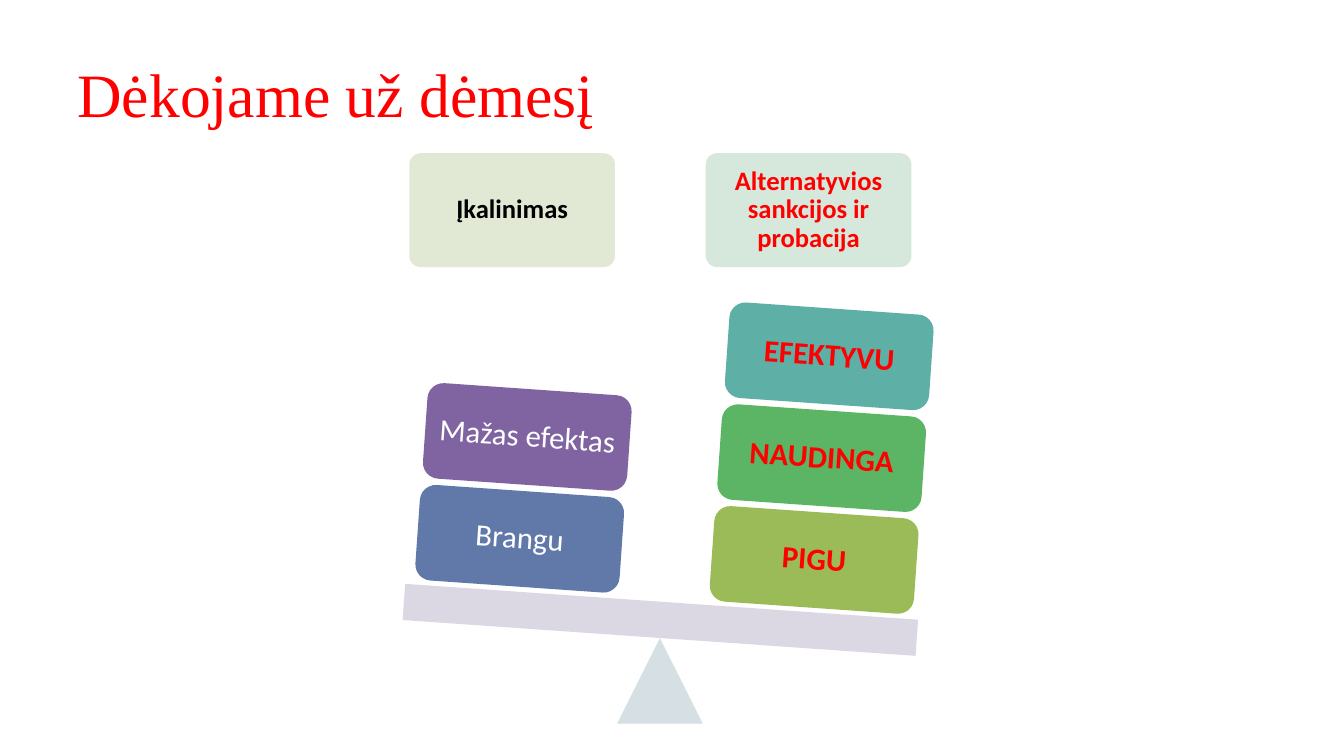
from lxml import etree
from pptx import Presentation
from pptx import util as u
from pptx.dml.color import RGBColor
from pptx.enum import shapes, text
from pptx.oxml.ns import qn

COLORS = {
    "red": "FF0000", "black": "000000", "white": "FFFFFF",
    "prison": "DEE7D1", "probation": "D2E5D9",
    "pivot": "D2DCE2", "beam": "D8D3E0",
    "cheap": "9BBB59", "useful": "5CB565", "effective": "5EAFA6",
    "costly": "6179A8", "weak": "8064A2",
}
SHAPE = shapes.MSO_SHAPE
TILT = 4


def write(sp, content, size=22, color="white", font="Calibri", bold=False,
          align=text.PP_ALIGN.CENTER, spacing=0.9, inset=0.09):
    tf = sp.text_frame
    tf.word_wrap = True
    tf.vertical_anchor = text.MSO_ANCHOR.MIDDLE
    tf.margin_left = tf.margin_right = u.Inches(inset)
    tf.margin_top = tf.margin_bottom = u.Inches(inset)
    p = tf.paragraphs[0]
    p.alignment = align
    p.line_spacing = spacing
    r = p.add_run()
    r.text = content
    r.font.name = font
    r.font.size = u.Pt(size)
    r.font.bold = bold
    r.font.color.rgb = RGBColor.from_string(COLORS[color])


class BalanceSlide:
    def __init__(self, prs):
        self.s = prs.slides.add_slide(prs.slide_layouts[6])

    def title(self, content, *box):
        sp = self.s.shapes.add_textbox(*map(u.Inches, box))
        write(sp, content, size=44, color="red", font="Times New Roman",
              align=text.PP_ALIGN.LEFT, spacing=1.0, inset=0.1)

    def shape(self, kind, fill, *box, rotation=0, alpha=None):
        sp = self.s.shapes.add_shape(kind, *map(u.Inches, box))
        sp.shadow.inherit = False
        sp.rotation = rotation
        sp.fill.solid()
        sp.fill.fore_color.rgb = RGBColor.from_string(COLORS[fill])
        sp.line.fill.background()
        if alpha:
            clr = sp._element.spPr.find(qn("a:solidFill"))[0]
            etree.SubElement(clr, qn("a:alpha"), val=str(alpha * 1000))
        return sp

    def header(self, content, fill, left, color):
        sp = self.shape(SHAPE.ROUNDED_RECTANGLE, fill, left, 1.52, 2.04, 1.13,
                        alpha=90)
        sp.adjustments[0] = 0.1
        write(sp, content, size=19, color=color, bold=True, inset=0.08)

    def stack(self, blocks, left, top, **style):
        # Blocks go upwards, shifted along the tilt of the beam
        for i, (content, fill) in enumerate(blocks):
            sp = self.shape(SHAPE.ROUNDED_RECTANGLE, fill,
                            left + 0.075 * i, top - 1.01 * i, 2.03, 0.95,
                            rotation=TILT)
            write(sp, content, **style)


def main():
    prs = Presentation()
    prs.slide_width, prs.slide_height = u.Inches(13.33), u.Inches(7.5)
    slide = BalanceSlide(prs)

    # Title and headers
    slide.title("Dėkojame už dėmesį", 0.67, 0.3, 12, 1.25)
    slide.header("Įkalinimas", "prison", 4.06, "black")
    slide.header("Alternatyvios sankcijos ir probacija", "probation", 7, "red")

    # Scale
    slide.shape(SHAPE.ISOSCELES_TRIANGLE, "pivot", 6.12, 6.33, 0.85, 0.85,
                alpha=90)
    slide.shape(SHAPE.RECTANGLE, "beam", 4, 5.97, 5.1, 0.36,
                rotation=TILT, alpha=90)

    # Weights
    slide.stack([("PIGU", "cheap"), ("NAUDINGA", "useful"),
                 ("EFEKTYVU", "effective")], 7.06, 5.08,
                color="red", bold=True)
    slide.stack([("Brangu", "costly"), ("Mažas efektas", "weak")], 4.14, 4.87)

    prs.save("out.pptx")


if __name__ == "__main__":
    main()
